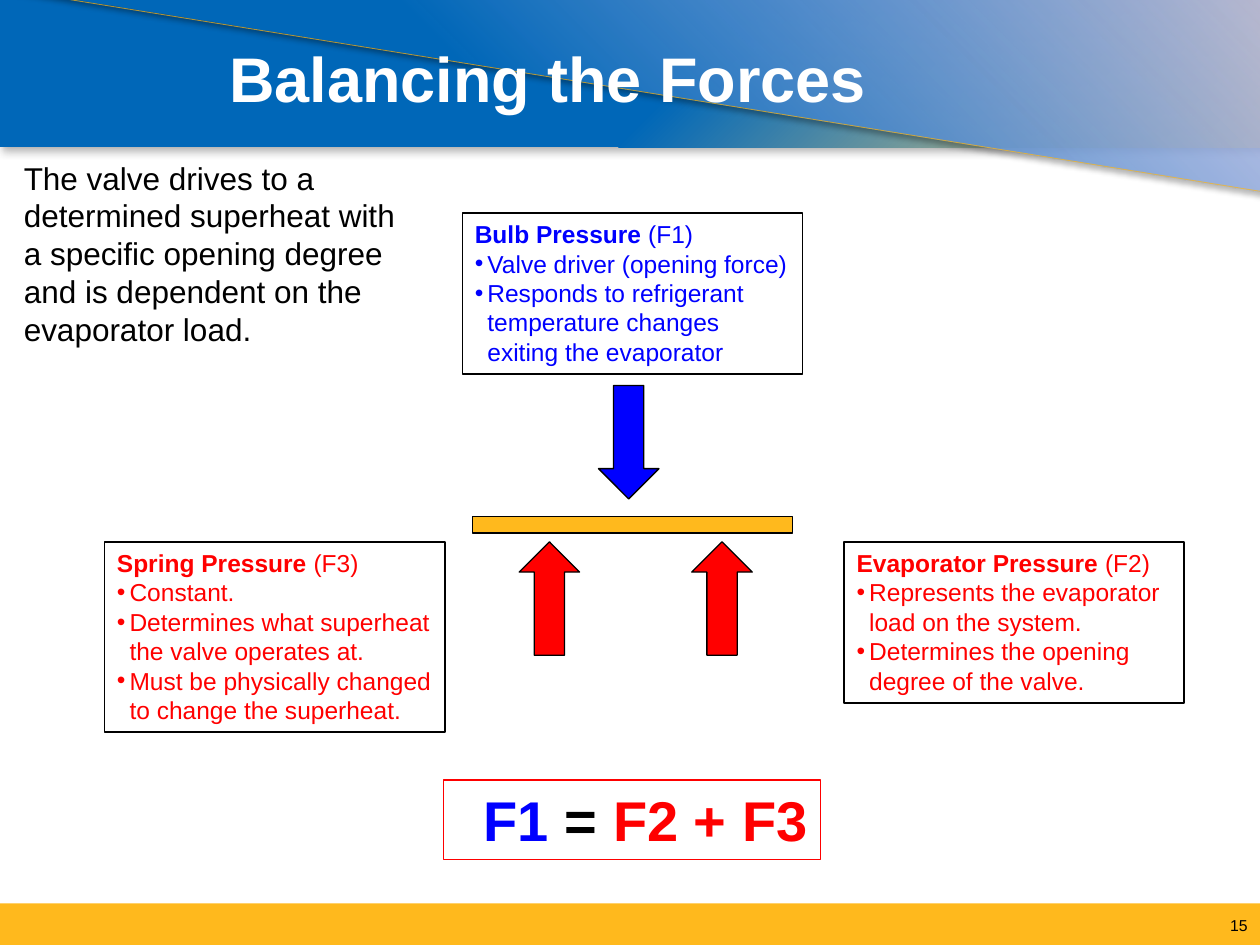
from dataclasses import dataclass
from typing import NamedTuple

from lxml.etree import SubElement as Sub
from pptx import Presentation
from pptx.dml.color import RGBColor as Rgb
from pptx.enum.shapes import MSO_SHAPE as Kind
from pptx.enum.text import MSO_ANCHOR as Anchor, MSO_AUTO_SIZE as Fit, PP_ALIGN as Align
from pptx.oxml.ns import qn
from pptx.util import Inches, Pt


@dataclass(frozen=True)
class Theme:
    font: str = "Arial"
    blue: str = "0000FF"
    red: str = "FF0000"
    edge_red: str = "FE0000"
    gold: str = "FFB91D"
    trim: str = "FFB717"
    sky: str = "0067B8"
    sand: str = "FFD577"
    mist: str = "C3C8F8"
    gray: str = "999999"
    black: str = "000000"
    white: str = "FFFFFF"
    title: int = 36
    sum: int = 32
    body: int = 18
    card: int = 14
    small: int = 9


T = Theme()


class Box(NamedTuple):
    left: float
    top: float
    width: float
    height: float


class Part(NamedTuple):
    text: str
    color: str
    bold: bool = False


class Stop(NamedTuple):
    spot: float
    color: str
    alpha: int = 100


class Shade(NamedTuple):
    color: str
    alpha: int
    blur: float
    dist: float
    angle: int


class Card(NamedTuple):
    box: Box
    head: str
    force: str
    color: str
    points: tuple[str, ...]


class Arrow(NamedTuple):
    left: float
    top: float
    turn: int
    color: str


CARDS = (
    Card(Box(3.67, 1.69, 2.7, 1.28), "Bulb Pressure", " (F1)", T.blue, (
        "Valve driver (opening force)",
        "Responds to refrigerant temperature changes exiting the evaporator")),
    Card(Box(6.7, 4.3, 2.7, 1.28), "Evaporator Pressure", " (F2)", T.red, (
        "Represents the evaporator load on the system.",
        "Determines the opening degree of the valve.")),
    Card(Box(0.83, 4.3, 2.7, 1.51), "Spring Pressure", " (F3)", T.red, (
        "Constant.",
        "Determines what superheat the valve operates at.",
        "Must be physically changed to change the superheat.")),
)
ARROWS = (Arrow(4.75, 3.06, 0, T.blue), Arrow(5.49, 4.3, 180, T.red),
          Arrow(4.12, 4.3, 180, T.red))


def rgb(code: str) -> Rgb:
    return Rgb.from_string(code)


def add_alpha(node, value: int) -> None:
    Sub(node, qn("a:alpha"), val=str(value * 1000))


def draw(slide, kind, box: Box, fill: str = "", line: str = "", width: float = 0.75):
    shape = slide.shapes.add_shape(kind, *map(Inches, box))
    shape.shadow.inherit = False
    if fill:
        shape.fill.solid()
        shape.fill.fore_color.rgb = rgb(fill)
    else:
        shape.fill.background()
    if line:
        shape.line.color.rgb = rgb(line)
        shape.line.width = Pt(width)
    else:
        shape.line.fill.background()
    return shape


def blend(shape, stops: tuple[Stop, Stop]) -> None:
    """Fill with two colours along the falling diagonal."""
    shape.fill.gradient()
    shape.fill.gradient_angle = 315
    for mark, stop in zip(shape.fill.gradient_stops, stops):
        mark.position = stop.spot
        mark.color.rgb = rgb(stop.color)
    nodes = shape._element.spPr.find(qn("a:gradFill")).iter(qn("a:srgbClr"))
    for node, stop in zip(list(nodes), stops):
        if stop.alpha < 100:
            add_alpha(node, stop.alpha)


def cast(shape, shade: Shade) -> None:
    """Add an outer shadow."""
    effect = shape._element.spPr.find(qn("a:effectLst"))
    outer = Sub(effect, qn("a:outerShdw"), blurRad=str(Pt(shade.blur)),
                dist=str(Pt(shade.dist)), dir=str(shade.angle * 60000),
                algn="ctr", rotWithShape="0")
    add_alpha(Sub(outer, qn("a:srgbClr"), val=shade.color), shade.alpha)


def frame(shape, anchor=Anchor.TOP, wrap: bool = True, fit=Fit.NONE):
    text = shape.text_frame
    text.word_wrap = wrap
    text.auto_size = fit
    text.vertical_anchor = anchor
    return text


def label(slide, box: Box, anchor=Anchor.TOP, fit=Fit.NONE):
    return frame(slide.shapes.add_textbox(*map(Inches, box)), anchor, fit=fit)


def write(para, parts: tuple[Part, ...], size: int, align=Align.LEFT) -> None:
    para.alignment = align
    for part in parts:
        run = para.add_run()
        run.text = part.text
        run.font.name = T.font
        run.font.size = Pt(size)
        run.font.bold = part.bold
        run.font.color.rgb = rgb(part.color)


def add_bullet(para) -> None:
    props = para._p.get_or_add_pPr()
    props.set("marL", str(Inches(0.1)))
    props.set("indent", str(Inches(-0.1)))
    Sub(props, qn("a:buFont"), typeface=T.font)
    Sub(props, qn("a:buChar"), char="•")


def draw_card(slide, card: Card) -> None:
    shape = draw(slide, Kind.RECTANGLE, card.box, line=T.black, width=1)
    text = frame(shape, fit=Fit.SHAPE_TO_FIT_TEXT)
    write(text.paragraphs[0], (Part(card.head, card.color, True),
                               Part(card.force, card.color)), T.card)
    for point in card.points:
        para = text.add_paragraph()
        add_bullet(para)
        write(para, (Part(point, card.color),), T.card)


def draw_frame(slide) -> None:
    """Draw the banner and the footer bar."""
    band = draw(slide, Kind.RECTANGLE, Box(-0.02, 0, 10.05, 1.17))
    blend(band, (Stop(0.54, T.sky), Stop(1, T.sand)))
    cast(band, Shade(T.gray, 75, 5, 3, 45))

    wedge = draw(slide, Kind.ISOSCELES_TRIANGLE, Box(4.23, -4.34, 1.63, 10.12),
                 line=T.trim, width=0.5)
    wedge.adjustments[0] = 1
    wedge.rotation = 270
    blend(wedge, (Stop(0.4, T.sky), Stop(0.98, T.mist, 72)))
    add_alpha(next(wedge.line._ln.iter(qn("a:srgbClr"))), 68)
    cast(wedge, Shade(T.black, 35, 3.1, 1.8, 90))

    draw(slide, Kind.RECTANGLE, Box(0, 7.17, 10, 0.33), T.gold)


def draw_title(slide) -> None:
    """Fill the title and bring it in front of the banner."""
    title = slide.shapes.title
    title.left, title.top, title.width, title.height = map(
        Inches, Box(1.72, 0.08, 7.69, 1.06))
    write(frame(title, Anchor.MIDDLE).paragraphs[0],
          (Part("Balancing the Forces", T.white, True),), T.title)
    tree = slide.shapes._spTree
    tree.remove(title._element)
    tree.append(title._element)


def draw_sum(slide) -> None:
    shape = draw(slide, Kind.RECTANGLE, Box(3.52, 6.19, 2.99, 0.63), line=T.edge_red)
    text = frame(shape, wrap=False, fit=Fit.SHAPE_TO_FIT_TEXT)
    text.margin_left, text.margin_top = Inches(0.3), Inches(0.15)
    para = text.paragraphs[0]
    para.line_spacing = 0.8
    write(para, (Part("F1 ", T.blue, True), Part("=", T.black, True),
                 Part(" F2 + F3", T.edge_red, True)), T.sum, Align.RIGHT)


def main() -> None:
    deck = Presentation()
    deck.slide_width, deck.slide_height = Inches(10), Inches(7.5)
    slide = deck.slides.add_slide(deck.slide_layouts[5])
    draw_frame(slide)
    draw_title(slide)
    page = label(slide, Box(8.76, 7.18, 1.24, 0.32), Anchor.MIDDLE)
    write(page.paragraphs[0], (Part("15", T.black),), T.small, Align.RIGHT)
    draw(slide, Kind.RECTANGLE, Box(3.75, 4.1, 2.54, 0.13), T.gold, T.black)
    for arrow in ARROWS:
        shape = draw(slide, Kind.DOWN_ARROW, Box(arrow.left, arrow.top, 0.48, 0.9),
                     arrow.color, T.black)
        shape.rotation = arrow.turn
    for card in CARDS:
        draw_card(slide, card)
    intro = label(slide, Box(0.09, 1.21, 3.18, 1.62), fit=Fit.SHAPE_TO_FIT_TEXT)
    write(intro.paragraphs[0], (Part(
        "The valve drives to a determined superheat with a specific opening degree "
        "and is dependent on the evaporator load.", T.black),), T.body)
    draw_sum(slide)
    deck.save("out.pptx")


if __name__ == "__main__":
    main()
